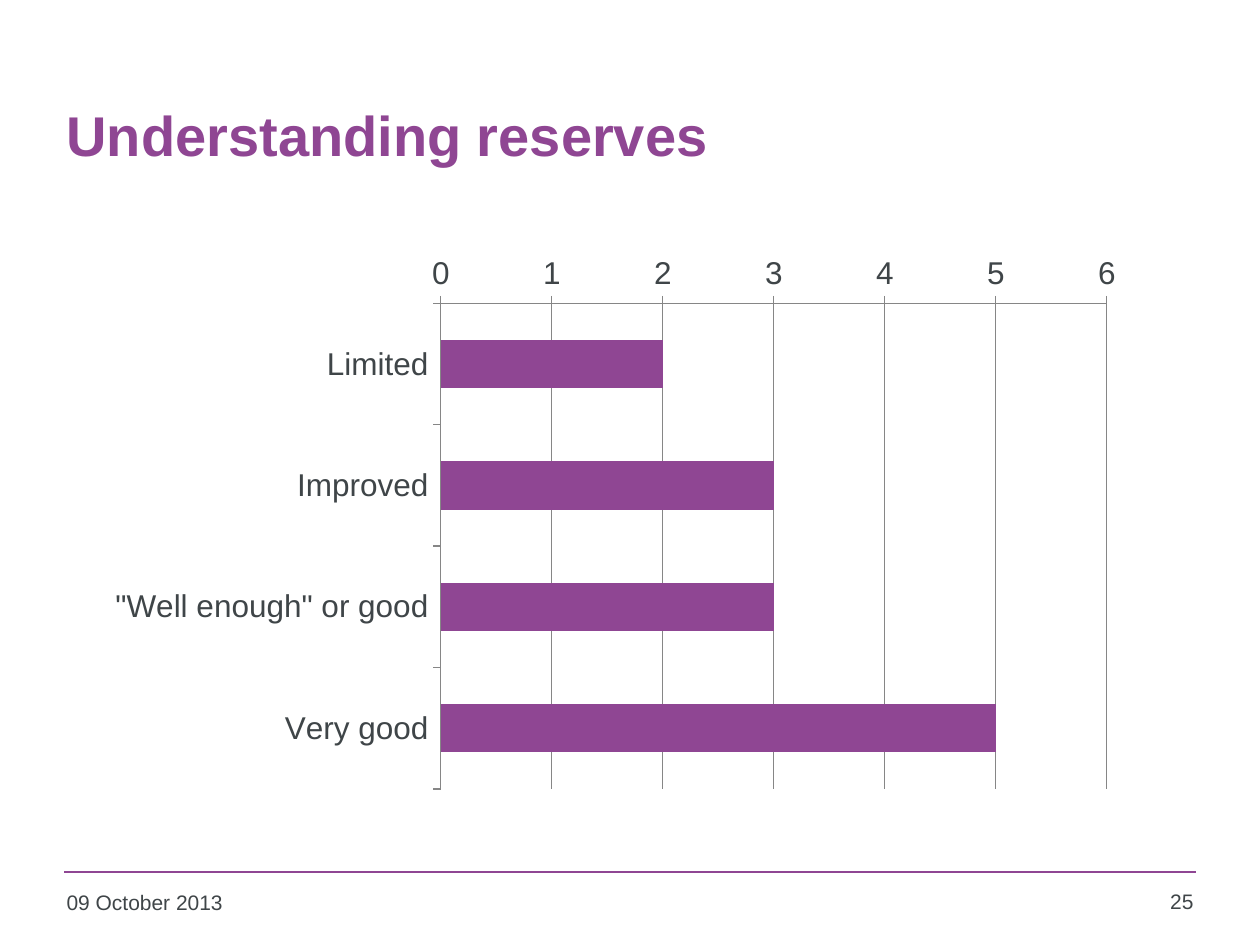
import pptx
import pptx.util
import pptx.chart.data
import pptx.dml.color
import pptx.enum.chart
import pptx.enum.shapes
import pptx.enum.text
import pptx.oxml

WIDE, HIGH = 10, 7.5
PLUM, SLATE, GREY = "8F4693", "3F4548", "868686"
FACE = "Arial"
ALIGN = pptx.enum.text.PP_ALIGN
ANCHOR = pptx.enum.text.MSO_ANCHOR
TICK = pptx.enum.chart.XL_TICK_MARK


def color(code):
    return pptx.dml.color.RGBColor.from_string(code)


def inches(*sizes):
    return [pptx.util.Inches(size) for size in sizes]


def style(font, size, code, bold=False):
    looks = {"name": FACE, "size": pptx.util.Pt(size), "bold": bold}
    for name, value in looks.items():
        setattr(font, name, value)
    font.color.rgb = color(code)


def label(slide, box, words, size, code, bold=False,
          align=ALIGN.LEFT, anchor=ANCHOR.TOP):
    frame = slide.shapes.add_textbox(*inches(*box)).text_frame
    frame.word_wrap = True
    frame.vertical_anchor = anchor
    para = frame.paragraphs[0]
    para.alignment = align
    run = para.add_run()
    run.text = words
    style(run.font, size, code, bold)


def title(slide, box, words):
    label(slide, box, words, 32, PLUM, True, anchor=ANCHOR.MIDDLE)


def bars(slide, box, names, values):
    data = pptx.chart.data.CategoryChartData()
    data.categories = names
    data.add_series("Series 1", values)
    kind = pptx.enum.chart.XL_CHART_TYPE.BAR_CLUSTERED
    chart = slide.shapes.add_chart(kind, *inches(*box), data).chart
    chart.has_legend = False
    chart.has_title = False
    style(chart.font, 18, SLATE)

    plot = chart.plots[0]
    plot.gap_width = 150
    plot.vary_by_categories = False
    fill = plot.series[0].format.fill
    fill.solid()
    fill.fore_color.rgb = color(PLUM)

    rows, scale = chart.category_axis, chart.value_axis
    rows.reverse_order = True
    limits = {"minimum_scale": 0, "maximum_scale": 6, "major_unit": 1,
              "has_major_gridlines": True}
    for name, value in limits.items():
        setattr(scale, name, value)
    for axis in (rows, scale):
        axis.major_tick_mark = TICK.OUTSIDE
        axis.minor_tick_mark = TICK.NONE
    for part in (rows, scale, scale.major_gridlines):
        part.format.line.color.rgb = color(GREY)
        part.format.line.width = pptx.util.Pt(0.75)


def footer(slide, box, date, page):
    """Draw a rule along the top of the box, with the date and page below."""
    left, top, width, height = box
    rule = slide.shapes.add_connector(
        pptx.enum.shapes.MSO_CONNECTOR.STRAIGHT,
        *inches(left, top, left + width, top))
    rule.line.color.rgb = color(PLUM)
    rule.line.width = pptx.util.Pt(1)
    rule._element.spPr.append(pptx.oxml.parse_xml(
        '<a:effectLst xmlns:a='
        '"http://schemas.openxmlformats.org/drawingml/2006/main"/>'))

    inset, gap = 0.08, 0.09
    span, tall = width + 2 * inset, height - gap
    first, last = 0.24 * span, 0.08 * span
    label(slide, (left - inset, top + gap, first, tall), date, 12, SLATE)
    label(slide, (left + width + inset - last, top + gap - 0.01, last, tall),
          page, 12, SLATE, align=ALIGN.RIGHT)


def main():
    deck = pptx.Presentation()
    deck.slide_width, deck.slide_height = inches(WIDE, HIGH)
    slide = deck.slides.add_slide(deck.slide_layouts[6])
    title(slide, (0.43, 0.44, 9.07, 1.25), "Understanding reserves")
    bars(slide, (0.75, 1.94, 8.27, 4.41),
         ["Limited", "Improved", '"Well enough" or good', "Very good"],
         [2, 3, 3, 5])
    footer(slide, (0.51, 6.92, WIDE - 2 * 0.51, 0.45),
           "09 October 2013", "25")
    deck.save("out.pptx")


if __name__ == "__main__":
    main()
